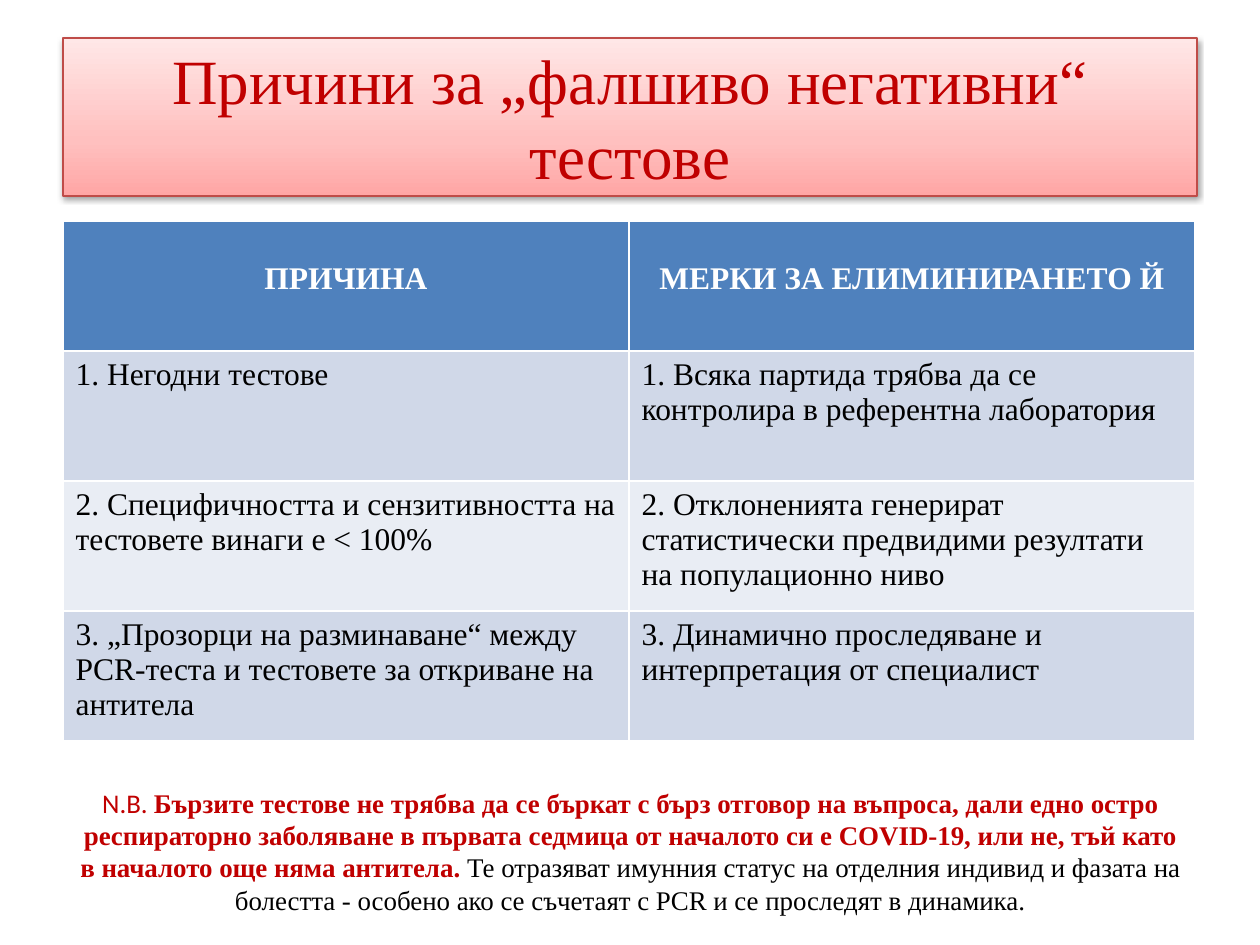
from copy import deepcopy

from lxml import etree
from pptx import Presentation
from pptx.dml.color import RGBColor
from pptx.enum.text import MSO_ANCHOR, MSO_AUTO_SIZE, PP_ALIGN
from pptx.oxml import parse_xml
from pptx.oxml.ns import qn
from pptx.util import Pt

CENTER = PP_ALIGN.CENTER
MIDDLE = MSO_ANCHOR.MIDDLE
NO_FIT = MSO_AUTO_SIZE.NONE

RED = RGBColor(0xC0, 0x00, 0x00)
BORDER = RGBColor(0xBF, 0x4C, 0x48)
BLACK = RGBColor(0x00, 0x00, 0x00)
WHITE = RGBColor(0xFF, 0xFF, 0xFF)
BLUE = RGBColor(0x4F, 0x81, 0xBD)
BAND_DARK = RGBColor(0xD0, 0xD8, 0xE8)
BAND_LIGHT = RGBColor(0xE9, 0xED, 0xF4)
PINKS = [
    (0, RGBColor(0xFF, 0xA6, 0xA5)),
    (0.35, RGBColor(0xFF, 0xC0, 0xBF)),
    (1, RGBColor(0xFF, 0xE7, 0xE7)),
]
SERIF = "Times New Roman"
SANS = "Calibri"

SHADOW = (
    '<a:effectLst xmlns:a="http://schemas.openxmlformats.org/drawingml/2006/main">'
    '<a:outerShdw blurRad="40000" dist="20000" dir="5400000" rotWithShape="0">'
    '<a:srgbClr val="000000"><a:alpha val="38000"/></a:srgbClr>'
    '</a:outerShdw></a:effectLst>'
)

ROWS = [
    ("ПРИЧИНА", "МЕРКИ ЗА ЕЛИМИНИРАНЕТО Й"),
    ("1. Негодни тестове",
     "1. Всяка партида трябва да се контролира в референтна лаборатория"),
    ("2. Специфичността и сензитивността на тестовете винаги е < 100%",
     "2. Отклоненията генерират статистически предвидими резултати на популационно ниво"),
    ("3. „Прозорци на разминаване“ между PCR-теста и тестовете за откриване на антитела",
     "3. Динамично проследяване и интерпретация от специалист"),
]
NOTE = [
    ("N.B. ", SANS, RED, False),
    ("Бързите тестове не трябва да се бъркат с бърз отговор на въпроса, дали едно "
     "остро респираторно заболяване в първата седмица от началото си е COVID-19, "
     "или не, тъй като в началото още няма антитела. ", SERIF, RED, True),
    ("Те отразяват имунния статус на отделния индивид и фазата на болестта - особено "
     "ако се съчетаят с PCR и се проследят в динамика.", SERIF, BLACK, False),
]


def px(n):
    return round(n * 914400 / 126)


def style(r, font, size, color, bold=False):
    r.font.name = font
    r.font.size = Pt(size)
    r.font.color.rgb = color
    r.font.bold = bold


prs = Presentation()
prs.slide_width, prs.slide_height = px(1260), px(945)
s = prs.slides.add_slide(prs.slide_layouts[1])
title, body = s.placeholders

title.left, title.top, title.width, title.height = px(63), px(38), px(1134), px(158)
title.fill.gradient()
title.fill.gradient_angle = 90
stops = title._element.spPr.find(qn("a:gradFill")).find(qn("a:gsLst"))
stops.append(deepcopy(stops[0]))
for stop, (position, color) in zip(title.fill.gradient_stops, PINKS):
    stop.position = position
    stop.color.rgb = color
title.line.color.rgb = BORDER
title.line.width = Pt(0.75)
title._element.spPr.append(parse_xml(SHADOW))
tf = title.text_frame
tf.text = "Причини за „фалшиво негативни“ тестове"
tf.auto_size = NO_FIT
tf.vertical_anchor = MIDDLE
p = tf.paragraphs[0]
p.alignment = CENTER
style(p.runs[0], SERIF, 36, RED)

table = s.shapes.add_table(len(ROWS), 2, px(63), px(221), px(1132), px(520)).table
for i, row in enumerate(ROWS):
    for j, text in enumerate(row):
        cell = table.cell(i, j)
        cell.text = text
        cell.fill.solid()
        p = cell.text_frame.paragraphs[0]
        if i == 0:
            cell.fill.fore_color.rgb = BLUE
            cell.margin_top = px(40)
            p.alignment = CENTER
            style(p.runs[0], SERIF, 18, WHITE, True)
        else:
            cell.fill.fore_color.rgb = BAND_DARK if i % 2 else BAND_LIGHT
            style(p.runs[0], SERIF, 18, BLACK)

body.left, body.top, body.width, body.height = px(64), px(780), px(1133), px(123)
tf = body.text_frame
tf.auto_size = NO_FIT
p = tf.paragraphs[0]
p.alignment = CENTER
pPr = p._p.get_or_add_pPr()
pPr.set("marL", "0")
pPr.set("indent", "0")
etree.SubElement(pPr, qn("a:buNone"))
for text, font, color, bold in NOTE:
    r = p.add_run()
    r.text = text
    style(r, font, 15.4, color, bold)

prs.save("out.pptx")
